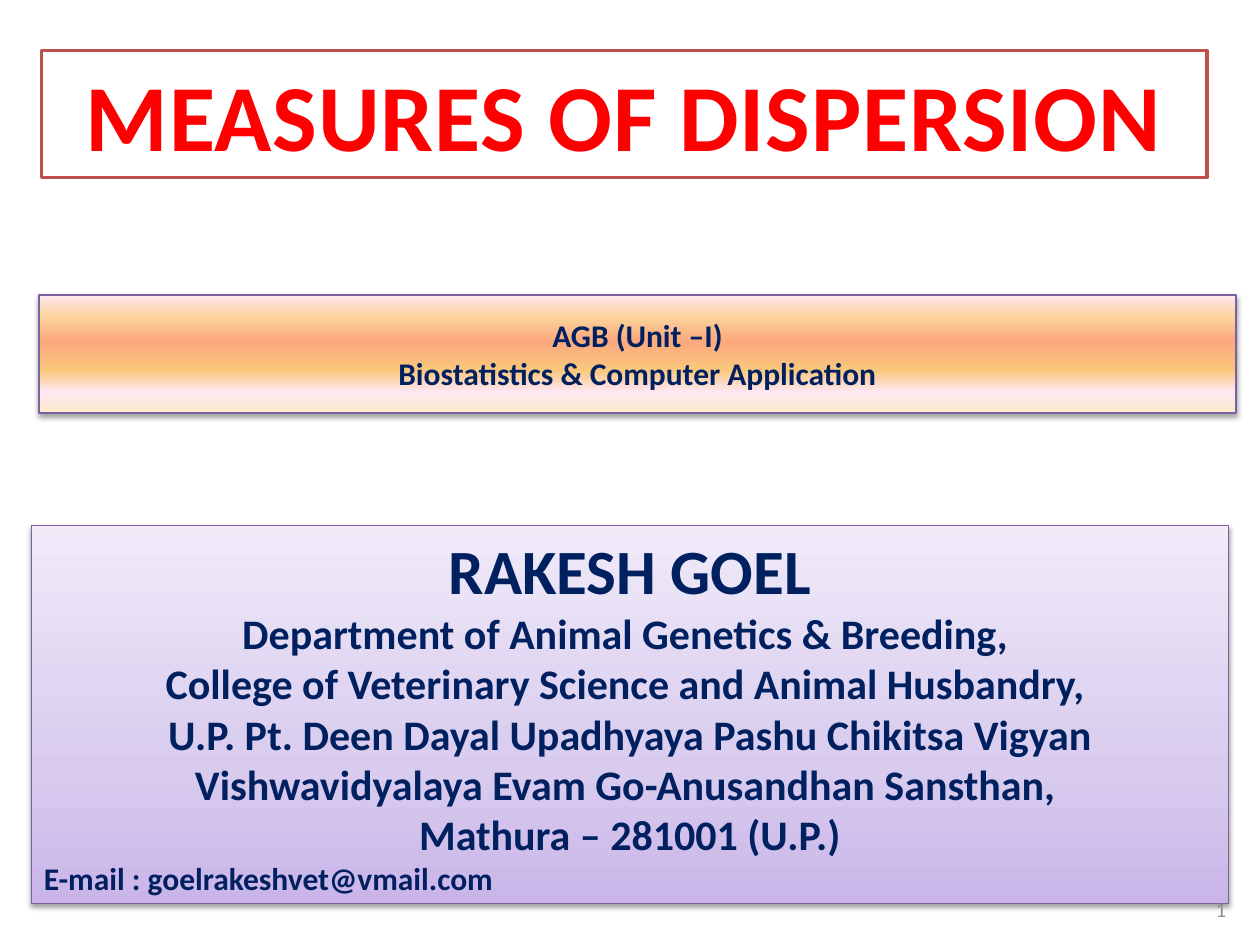
import pptx
import pptx.util
import pptx.dml.color
import pptx.enum.shapes
import pptx.enum.text
import pptx.oxml
import pptx.oxml.ns

WIDTH, HEIGHT = 10, 7.5
COLORS = {
    "white": "FFFFFF", "title": "FF0000", "title_line": "C0504D",
    "text": "002060", "panel_line": "7D60A0", "number": "8C8C8C",
}
# Gradient stops, bottom to top: (percent, colour)
LILAC = [(0, "C9B5E8"), (35, "D8CBEE"), (100, "F0EAF9")]
SUNSET = [(0, "FBEAC7"), (18, "FEE7F2"), (36, "FAC77D"),
          (61, "FBA97D"), (82, "FBD49C"), (100, "FEE7F2")]
LEFT, CENTER, RIGHT = (pptx.enum.text.PP_ALIGN.LEFT, pptx.enum.text.PP_ALIGN.CENTER,
                       pptx.enum.text.PP_ALIGN.RIGHT)
NS = pptx.oxml.ns.nsdecls("a")


def rgb(name):
    return pptx.dml.color.RGBColor.from_string(COLORS[name])


class SlideBuilder:
    """Holds the style and the current slide; positions are shares of its size."""

    font = "Calibri"

    def __init__(self, prs):
        self.prs = prs
        self.slide = prs.slides.add_slide(prs.slide_layouts[6])

    def place(self, x, y, w, h):
        sw, sh = self.prs.slide_width, self.prs.slide_height
        return [round(v) for v in (x * sw, y * sh, w * sw, h * sh)]

    def add_lines(self, sp, lines, color, bold=True, anchor="MIDDLE"):
        """Fill a shape with lines of (text, size, alignment)."""
        tf = sp.text_frame
        tf.word_wrap = True
        tf.vertical_anchor = pptx.enum.text.MSO_ANCHOR[anchor]
        for i, (text, size, align) in enumerate(lines):
            p = tf.paragraphs[0] if i == 0 else tf.add_paragraph()
            p.add_run().text = text
            p.alignment = align
            p.font.name, p.font.size, p.font.bold = self.font, pptx.util.Pt(size), bold
            p.font.color.rgb = rgb(color)

    def box(self, at, line, line_width):
        sp = self.slide.shapes.add_shape(
            pptx.enum.shapes.MSO_SHAPE.RECTANGLE, *self.place(*at))
        sp.shadow.inherit = False
        sp.line.color.rgb = rgb(line)
        sp.line.width = pptx.util.Pt(line_width)
        return sp

    def title(self, at, text):
        sp = self.box(at, "title_line", 2)
        sp.fill.solid()
        sp.fill.fore_color.rgb = rgb("white")
        self.add_lines(sp, [(text, 54, CENTER)], "title", anchor="TOP")
        sp.text_frame.auto_size = pptx.enum.text.MSO_AUTO_SIZE.SHAPE_TO_FIT_TEXT
        sp.text_frame.paragraphs[0].runs[0]._r.get_or_add_rPr().set("spc", "50")

    def panel(self, at, stops, lines):
        sp = self.box(at, "panel_line", 0.75)
        sp.fill.gradient()
        sp.fill.gradient_angle = 90
        # Gradients of more than two stops need XML
        gs_list = sp._element.spPr.find(".//" + pptx.oxml.ns.qn("a:gsLst"))
        gs_list.clear()
        for percent, color in stops:
            gs_list.append(pptx.oxml.parse_xml(
                f'<a:gs {NS} pos="{percent * 1000}"><a:srgbClr val="{color}"/></a:gs>'))
        # Soft shadow below the panel
        effects = sp._element.spPr.find(pptx.oxml.ns.qn("a:effectLst"))
        effects.append(pptx.oxml.parse_xml(
            f'<a:outerShdw {NS} blurRad="{pptx.util.Pt(3.1)}" dist="{pptx.util.Pt(1.6)}" '
            'dir="5400000" rotWithShape="0"><a:srgbClr val="000000">'
            '<a:alpha val="38000"/></a:srgbClr></a:outerShdw>'))
        self.add_lines(sp, lines, "text")

    def number(self, at, text):
        sp = self.slide.shapes.add_textbox(*self.place(*at))
        self.add_lines(sp, [(text, 12, RIGHT)], "number", bold=False)


def main():
    prs = pptx.Presentation()
    prs.slide_width = pptx.util.Inches(WIDTH)
    prs.slide_height = pptx.util.Inches(HEIGHT)
    s = SlideBuilder(prs)

    # Title
    s.title((0.033, 0.4 / HEIGHT, 0.925, 1.01 / HEIGHT), "MEASURES OF DISPERSION")

    # Author and address
    address = [
        "Department of Animal Genetics & Breeding, ",
        "College of Veterinary Science and Animal Husbandry, ",
        "U.P. Pt. Deen Dayal Upadhyaya Pashu Chikitsa Vigyan "
        "Vishwavidyalaya Evam Go-Anusandhan Sansthan, ",
        "Mathura – 281001 (U.P.)",
    ]
    s.panel((0.025, 4.17 / HEIGHT, 0.95, 0.4), LILAC,
            [("RAKESH GOEL", 36, CENTER)]
            + [(text, 24, CENTER) for text in address]
            + [("E-mail : goelrakeshvet@vmail.com", 18, LEFT)])

    # Slide number
    s.number((0.9, 7.08 / HEIGHT, 0.083, 0.27 / HEIGHT), "1")

    # Course unit
    s.panel((0.031, 2.34 / HEIGHT, 0.95, 0.125), SUNSET,
            [("AGB (Unit –I)", 18, CENTER),
             ("Biostatistics & Computer Application", 18, CENTER)])

    prs.save("out.pptx")


if __name__ == "__main__":
    main()
